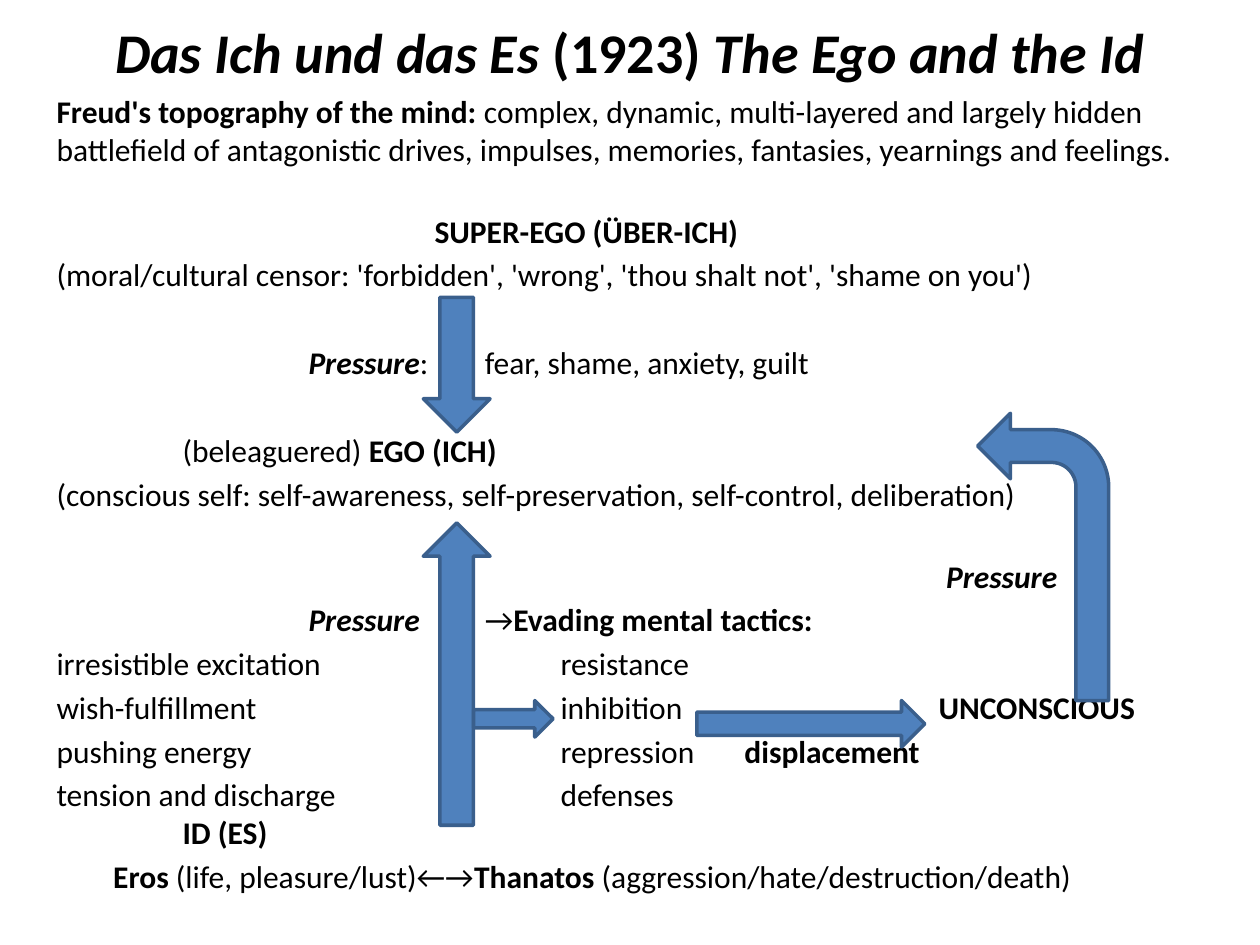
import pptx
import pptx.util
import pptx.dml.color
import pptx.enum.shapes
import pptx.enum.text
import pptx.oxml
import pptx.oxml.ns

Inches, Pt = pptx.util.Inches, pptx.util.Pt
KIND = pptx.enum.shapes.MSO_SHAPE
ALIGN = pptx.enum.text.PP_ALIGN
qn = pptx.oxml.ns.qn
INK = {"text": "000000", "fill": "4F81BD", "edge": "3A5F8C"}
HUE = {key: pptx.dml.color.RGBColor.from_string(val) for key, val in INK.items()}
LOOK = {"": {}, "b": {"bold": True}, "bi": {"bold": True, "italic": True}}

deck = pptx.Presentation()
deck.slide_width, deck.slide_height = Inches(10), Inches(7.5)
slide = deck.slides.add_slide(deck.slide_layouts[6])


def add_box(left, top, width, height):
    frame = slide.shapes.add_textbox(
        Inches(left), Inches(top), Inches(width), Inches(height)).text_frame
    frame.word_wrap = True
    return frame


def add_runs(para, size, runs):
    for look, text in runs:
        run = para.add_run()
        run.text = text
        form = {"name": "Calibri", "size": Pt(size), "bold": False, "italic": False}
        for key, val in (form | LOOK[look]).items():
            setattr(run.font, key, val)
        run.font.color.rgb = HUE["text"]


title = add_box(0.5, 0.09, 9, 0.65).paragraphs[0]
title.alignment = ALIGN.CENTER
add_runs(title, 32, [("bi", "Das Ich und das Es "), ("b", "(1923) "),
                     ("bi", "The Ego and the Id")])

near, far = 3.4, 25.2
wide = near + far
lines = [
    (0, [], [("b", "Freud's topography of the mind: "),
             ("", "complex, dynamic, multi-layered and largely hidden battlefield of "
                  "antagonistic drives, impulses, memories, fantasies, yearnings and feelings.")]),
    (far, [3], [("b", "\tSUPER-EGO (ÜBER-ICH)")]),
    (near, [], [("", "(moral/cultural censor: 'forbidden', 'wrong', 'thou shalt not', "
                     "'shame on you')")]),
    (wide, [2, 3.4], [("bi", "\tPressure"), ("", ":\tfear, shame, anxiety, guilt")]),
    (wide, [1], [("", "\t(beleaguered) "), ("b", "EGO (ICH)")]),
    (near, [], [("", "(conscious self: self-awareness, self-preservation, self-control, "
                     "deliberation)")]),
    (far, [7.06], [("bi", "\tPressure")]),
    (near, [2, 3.4], [("bi", "\tPressure"), ("", "\t→"), ("b", "Evading mental tactics:")]),
    (near, [4], [("", "irresistible excitation\tresistance")]),
    (near, [4, 7], [("", "wish-fulfillment\tinhibition"), ("b", "\tUNCONSCIOUS")]),
    (near, [4, 5.46], [("", "pushing energy\trepression"), ("b", "\tdisplacement")]),
    (near, [4], [("", "tension and discharge\tdefenses")]),
    (0, [1], [("b", "\tID (ES)")]),
    (near, [0.45], [("b", "\tEros"), ("", " (life, pleasure/lust)←→"), ("b", "Thanatos"),
                    ("", " (aggression/hate/destruction/death)")]),
]
body = add_box(0.35, 0.68, 9.15, 6.02)
for num, (gap, stops, runs) in enumerate(lines):
    para = body.add_paragraph() if num else body.paragraphs[0]
    para.space_before = Pt(gap)
    if stops:
        tabs = pptx.oxml.parse_xml(
            '<a:tabLst xmlns:a="http://schemas.openxmlformats.org/drawingml/2006/main"/>')
        for stop in stops:
            tab = tabs.makeelement(qn("a:tab"), {"pos": str(Inches(stop)), "algn": "l"})
            tabs.append(tab)
        para._p.get_or_add_pPr().append(tabs)
    add_runs(para, 18, runs)

arrows = [
    (KIND.DOWN_ARROW, 3.36, 2.36, 0.53, 1.07),
    (KIND.RIGHT_ARROW, 5.53, 5.56, 1.81, 0.37),
    (KIND.UP_ARROW, 3.36, 4.15, 0.53, 2.4),
    (KIND.RIGHT_ARROW, 3.76, 5.56, 0.63, 0.29),
    (KIND.BENT_ARROW, 7.76, 3.28, 1.04, 2.28),
]
for kind, *place in arrows:
    arrow = slide.shapes.add_shape(kind, *map(Inches, place))
    arrow.shadow.inherit = False
    arrow.fill.solid()
    arrow.fill.fore_color.rgb = HUE["fill"]
    arrow.line.color.rgb = HUE["edge"]
    arrow.line.width = Pt(2)
    if kind == KIND.BENT_ARROW:
        arrow._element.spPr.find(qn("a:xfrm")).set("flipH", "1")

deck.save("out.pptx")
